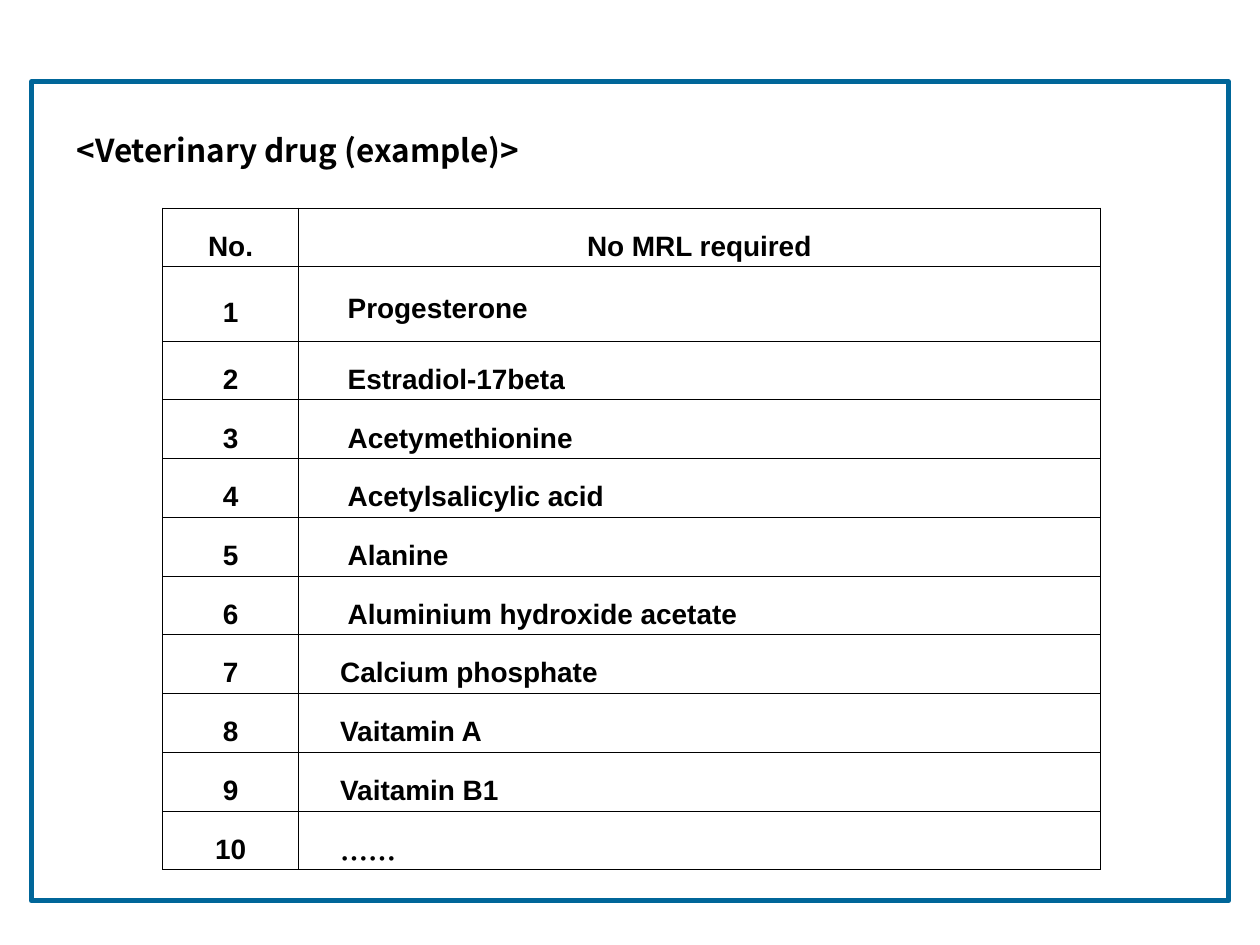
from lxml.etree import SubElement
from pptx import Presentation
from pptx.dml.color import RGBColor
from pptx.enum.shapes import MSO_SHAPE
from pptx.enum.text import MSO_ANCHOR, MSO_AUTO_SIZE, PP_ALIGN
from pptx.oxml.ns import qn
from pptx.util import Inches, Pt

BODY_FONT = "Arial"
TITLE_FONT = "Noto Sans CJK KR"
BLACK, WHITE, BLUE = "000000", "FFFFFF", "006699"
PAD = 0.02
DEEP_INDENT, SHALLOW_INDENT = 0.39, 0.33
DRUGS = [
    ("Progesterone", DEEP_INDENT),
    ("Estradiol-17beta", DEEP_INDENT),
    ("Acetymethionine", DEEP_INDENT),
    ("Acetylsalicylic acid", DEEP_INDENT),
    ("Alanine", DEEP_INDENT),
    ("Aluminium hydroxide acetate", DEEP_INDENT),
    ("Calcium phosphate", SHALLOW_INDENT),
    ("Vaitamin A", SHALLOW_INDENT),
    ("Vaitamin B1", SHALLOW_INDENT),
    ("……", SHALLOW_INDENT),
]


def color(value):
    return RGBColor.from_string(value)


def add_run(paragraph, text, size, font):
    run = paragraph.add_run()
    run.text = text
    run.font.size = Pt(size)
    run.font.name = font
    run.font.bold = True
    run.font.color.rgb = color(BLACK)


def add_frame(slide, left, top, width, height):
    shape = slide.shapes.add_shape(
        MSO_SHAPE.RECTANGLE, Inches(left), Inches(top), Inches(width), Inches(height))
    shape.shadow.inherit = False
    shape.fill.background()
    shape.line.color.rgb = color(BLUE)
    shape.line.width = Pt(3)


def add_title(slide, left, top, width, height):
    shape = slide.shapes.add_textbox(
        Inches(left), Inches(top), Inches(width), Inches(height))
    shape.text_frame.word_wrap = False
    shape.text_frame.auto_size = MSO_AUTO_SIZE.SHAPE_TO_FIT_TEXT
    add_run(shape.text_frame.paragraphs[0], "<Veterinary drug (example)>", 18, TITLE_FONT)


def set_borders(cell):
    properties = cell._tc.get_or_add_tcPr()
    for position, side in enumerate(("a:lnL", "a:lnR", "a:lnT", "a:lnB")):
        line = properties.makeelement(qn(side), {"w": str(Pt(0.28))})
        fill = SubElement(line, qn("a:solidFill"))
        SubElement(fill, qn("a:srgbClr"), val=BLACK)
        properties.insert(position, line)


def fill_cell(cell, text, alignment, spacing=1.6, indent=PAD, font=BODY_FONT):
    cell.fill.solid()
    cell.fill.fore_color.rgb = color(WHITE)
    cell.vertical_anchor = MSO_ANCHOR.MIDDLE
    cell.margin_left = Inches(indent)
    cell.margin_right = cell.margin_top = cell.margin_bottom = Inches(PAD)
    set_borders(cell)
    paragraph = cell.text_frame.paragraphs[0]
    paragraph.alignment = alignment
    paragraph.line_spacing = spacing
    add_run(paragraph, text, 16, font)


def add_drug_table(slide, left, top, width, height):
    number_width, first_height = 1.08, 0.59
    table = slide.shapes.add_table(
        len(DRUGS) + 1, 2, Inches(left), Inches(top), Inches(width), Inches(height)).table
    table.columns[0].width = Inches(number_width)
    table.columns[1].width = Inches(width - number_width)
    for row in table.rows:
        row.height = Inches((height - first_height) / len(DRUGS))
    table.rows[1].height = Inches(first_height)

    for column, heading in enumerate(("No.", "No MRL required")):
        fill_cell(table.cell(0, column), heading, PP_ALIGN.CENTER)
    for number, (drug, indent) in enumerate(DRUGS, 1):
        spacing = 1.3 if number == 1 else 1.6
        font = TITLE_FONT if drug == "……" else BODY_FONT
        fill_cell(table.cell(number, 0), str(number), PP_ALIGN.CENTER)
        fill_cell(table.cell(number, 1), drug, PP_ALIGN.JUSTIFY, spacing, indent, font)


def main():
    presentation = Presentation()
    presentation.slide_width = Inches(10)
    presentation.slide_height = Inches(7.5)
    slide = presentation.slides.add_slide(presentation.slide_layouts[6])
    add_frame(slide, 0.25, 0.65, 9.5, 6.5)
    add_title(slide, 0.51, 0.99, 3.74, 0.4)
    add_drug_table(slide, 1.29, 1.65, 7.44, 5.25)
    presentation.save("out.pptx")


if __name__ == "__main__":
    main()
